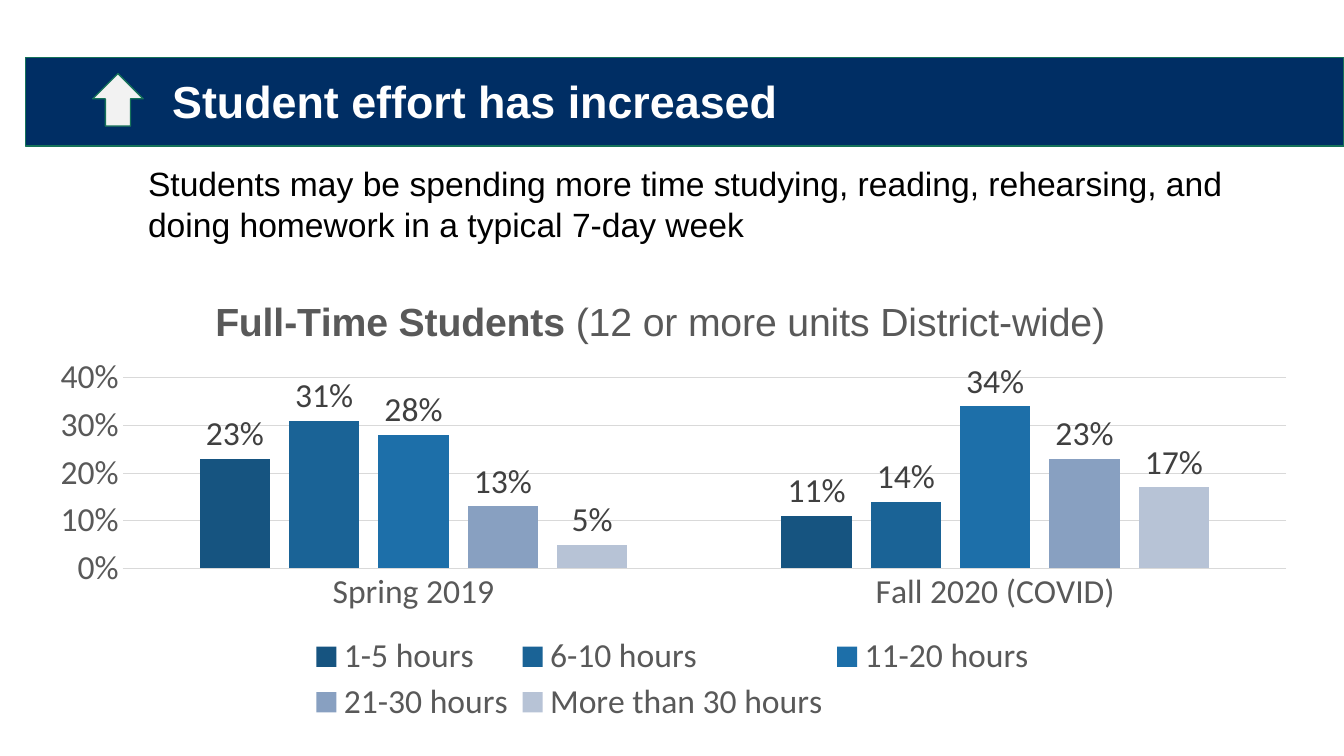
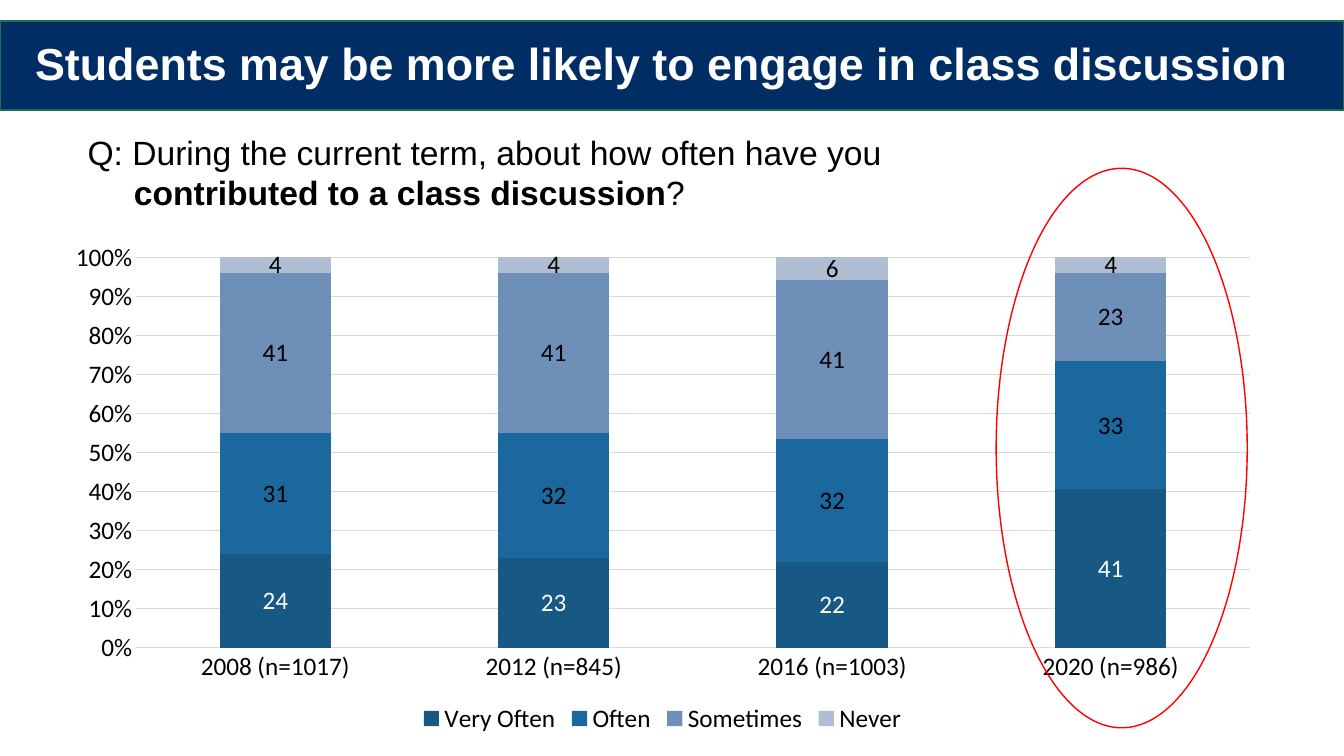
from dataclasses import dataclass

from lxml.etree import SubElement
from pptx import Presentation
from pptx.chart.data import CategoryChartData
from pptx.dml.color import RGBColor
from pptx.enum.chart import XL_CHART_TYPE, XL_LABEL_POSITION, XL_LEGEND_POSITION, XL_TICK_MARK
from pptx.enum.shapes import MSO_SHAPE
from pptx.enum.text import MSO_ANCHOR
from pptx.oxml.ns import qn
from pptx.util import Inches, Pt


@dataclass(frozen=True)
class Theme:
    navy: str = "002E64"
    green: str = "157259"
    white: str = "FFFFFF"
    black: str = "000000"
    pale: str = "F2F2F2"
    red: str = "FF0000"
    grid: str = "D9D9D9"
    gray: str = "595959"
    label_gray: str = "404040"
    text_font: str = "Arial"
    chart_font: str = "Calibri"
    title_size: int = 32
    chart_title_size: int = 28
    body_size: int = 24
    small_size: int = 18


THEME = Theme()
BAND_HEIGHT = 0.88

EFFORT = {
    "band": (0.25, 0.57, 13.08),
    "title": "Student effort has increased",
    "title_box": (1.61, 0.56, 11, 0.94),
    "body": [("Students may be spending more time studying, reading, rehearsing, and "
              "doing homework in a typical 7-day week", False)],
    "body_box": (1.37, 1.57, 11.05, 0.95),
    "hanging": 0,
    "mark": (MSO_SHAPE.UP_ARROW, (0.92, 0.73, 0.5, 0.52), THEME.pale, THEME.green),
    "chart": {
        "kind": XL_CHART_TYPE.COLUMN_CLUSTERED,
        "box": (0.33, 2.76, 12.68, 4.5),
        "categories": ["Spring 2019", "Fall 2020 (COVID)"],
        "series": [
            ("1-5 hours", (0.23, 0.11), "165480", THEME.label_gray),
            ("6-10 hours", (0.31, 0.14), "1A6396", THEME.label_gray),
            ("11-20 hours", (0.28, 0.34), "1D6FA9", THEME.label_gray),
            ("21-30 hours", (0.13, 0.23), "88A0C1", THEME.label_gray),
            ("More than 30 hours", (0.05, 0.17), "B7C3D6", THEME.label_gray),
        ],
        "title": [("Full-Time Students", True), (" (12 or more units District-wide)", False)],
        "size": THEME.body_size,
        "color": THEME.gray,
        "label_format": "0%",
        "label_position": XL_LABEL_POSITION.OUTSIDE_END,
        "gap": 219,
        "overlap": -27,
        "scale": (0.4, 0.1),
        "layouts": {
            "title": (0.14, 0.04),
            "plotArea": (0.07, 0.22, 0.91, 0.42),
            "legend": (0.21, 0.78, 0.58, 0.21),
        },
    },
}

DISCUSSION = {
    "band": (0, 0.21, 13.33),
    "title": "Students may be more likely to engage in class discussion",
    "title_box": (0.25, 0.18, 12.92, 0.94),
    "body": [("Q: During the current term, about how often have you", False), ("\n", False),
             ("contributed to a class discussion", True), ("?", False)],
    "body_box": (0.77, 1.26, 11.6, 0.91),
    "hanging": 0.46,
    "mark": (MSO_SHAPE.OVAL, (9.88, 1.67, 2.49, 5.55), None, THEME.red),
    "chart": {
        "kind": XL_CHART_TYPE.COLUMN_STACKED_100,
        "box": (0.5, 2.3, 12.14, 5.03),
        "categories": ["2008 (n=1017)", "2012 (n=845)", "2016 (n=1003)", "2020 (n=986)"],
        "series": [
            ("Very Often", (24, 23, 22, 41), "175885", THEME.white),
            ("Often", (31, 32, 32, 33), "1B689E", THEME.black),
            ("Sometimes", (41, 41, 41, 23), "6E90B8", THEME.black),
            ("Never", (4, 4, 6, 4), "B0BED3", THEME.black),
        ],
        "title": None,
        "size": THEME.small_size,
        "color": THEME.black,
        "label_format": "0",
        "label_position": XL_LABEL_POSITION.CENTER,
        "gap": 150,
        "overlap": 100,
        "scale": None,
        "layouts": {"plotArea": (0.07, 0.05, 0.91, 0.77)},
    },
}


def color(value):
    return RGBColor.from_string(value)


def inches(values):
    return [Inches(value) for value in values]


def style_font(font, size, fill, name=THEME.chart_font, bold=False):
    font.name = name
    font.size = Pt(size)
    font.bold = bold
    font.color.rgb = color(fill)


def write_runs(paragraph, runs, size, fill):
    for text, bold in runs:
        if text == "\n":
            paragraph.add_line_break()
            continue
        run = paragraph.add_run()
        run.text = text
        style_font(run.font, size, fill, THEME.text_font, bold)


def add_text(slide, box, runs, size=THEME.body_size, fill=THEME.black,
             anchor=MSO_ANCHOR.TOP, spacing=None, hanging=0):
    frame = slide.shapes.add_textbox(*inches(box)).text_frame
    frame.word_wrap = True
    frame.vertical_anchor = anchor
    paragraph = frame.paragraphs[0]
    paragraph.line_spacing = spacing
    write_runs(paragraph, runs, size, fill)
    if hanging:
        properties = paragraph._p.get_or_add_pPr()
        properties.set("marL", str(Inches(hanging)))
        properties.set("indent", str(-Inches(hanging)))


def add_outlined_shape(slide, kind, box, fill, line):
    shape = slide.shapes.add_shape(kind, *inches(box))
    shape.shadow.inherit = False
    if fill:
        shape.fill.solid()
        shape.fill.fore_color.rgb = color(fill)
    else:
        shape.fill.background()
    shape.line.color.rgb = color(line)
    shape.line.width = Pt(1)


def place_chart_part(chart, part, fractions):
    element = chart._chartSpace.find(".//" + qn(f"c:{part}"))
    for present in element.findall(qn("c:layout")):
        element.remove(present)
    layout = SubElement(element, qn("c:layout"))
    element.insert(0 if part == "plotArea" else 1, layout)
    manual = SubElement(layout, qn("c:manualLayout"))
    settings = [("layoutTarget", "inner")] if part == "plotArea" else []
    settings += [("xMode", "edge"), ("yMode", "edge"), *zip("xywh", fractions)]
    for tag, value in settings:
        SubElement(manual, qn(f"c:{tag}")).set("val", str(value))


def style_axes(chart, content):
    for axis in (chart.category_axis, chart.value_axis):
        axis.major_tick_mark = axis.minor_tick_mark = XL_TICK_MARK.NONE
        style_font(axis.tick_labels.font, content["size"], content["color"])
    value_axis = chart.value_axis
    value_axis.format.line.fill.background()
    value_axis.has_major_gridlines = True
    value_axis.tick_labels.number_format = "0%"
    value_axis.tick_labels.number_format_is_linked = False
    for line in (chart.category_axis.format.line, value_axis.major_gridlines.format.line):
        line.color.rgb = color(THEME.grid)
        line.width = Pt(0.75)
    if content["scale"]:
        value_axis.minimum_scale = 0
        value_axis.maximum_scale, value_axis.major_unit = content["scale"]


def style_series(plot, content):
    plot.vary_by_categories = False
    plot.gap_width = content["gap"]
    plot.overlap = content["overlap"]
    for series, (_, _, fill, label_color) in zip(plot.series, content["series"]):
        series.format.fill.solid()
        series.format.fill.fore_color.rgb = color(fill)
        labels = series.data_labels
        labels.show_value = True
        labels.number_format = content["label_format"]
        labels.number_format_is_linked = False
        labels.position = content["label_position"]
        style_font(labels.font, content["size"], label_color)


def add_column_chart(slide, content):
    data = CategoryChartData(number_format=content["label_format"])
    data.categories = content["categories"]
    for name, values, _, _ in content["series"]:
        data.add_series(name, values)
    chart = slide.shapes.add_chart(content["kind"], *inches(content["box"]), data).chart
    style_font(chart.font, content["size"], THEME.black)
    chart.has_title = bool(content["title"])
    if content["title"]:
        write_runs(chart.chart_title.text_frame.paragraphs[0], content["title"],
                   THEME.chart_title_size, THEME.gray)
    chart.has_legend = True
    chart.legend.position = XL_LEGEND_POSITION.BOTTOM
    chart.legend.include_in_layout = False
    style_font(chart.legend.font, content["size"], content["color"])
    style_axes(chart, content)
    style_series(chart.plots[0], content)
    for part, fractions in content["layouts"].items():
        place_chart_part(chart, part, fractions)


def add_survey_slide(presentation, content):
    slide = presentation.slides.add_slide(presentation.slide_layouts[6])
    add_outlined_shape(slide, MSO_SHAPE.RECTANGLE, (*content["band"], BAND_HEIGHT),
                       THEME.navy, THEME.green)
    add_text(slide, content["title_box"], [(content["title"], True)], size=THEME.title_size,
             fill=THEME.white, anchor=MSO_ANCHOR.MIDDLE, spacing=0.9)
    add_text(slide, content["body_box"], content["body"], hanging=content["hanging"])
    add_column_chart(slide, content["chart"])
    add_outlined_shape(slide, *content["mark"])


def main():
    presentation = Presentation()
    presentation.slide_width = Inches(13.33)
    presentation.slide_height = Inches(7.5)
    for content in (EFFORT, DISCUSSION):
        add_survey_slide(presentation, content)
    presentation.save("out.pptx")


if __name__ == "__main__":
    main()
